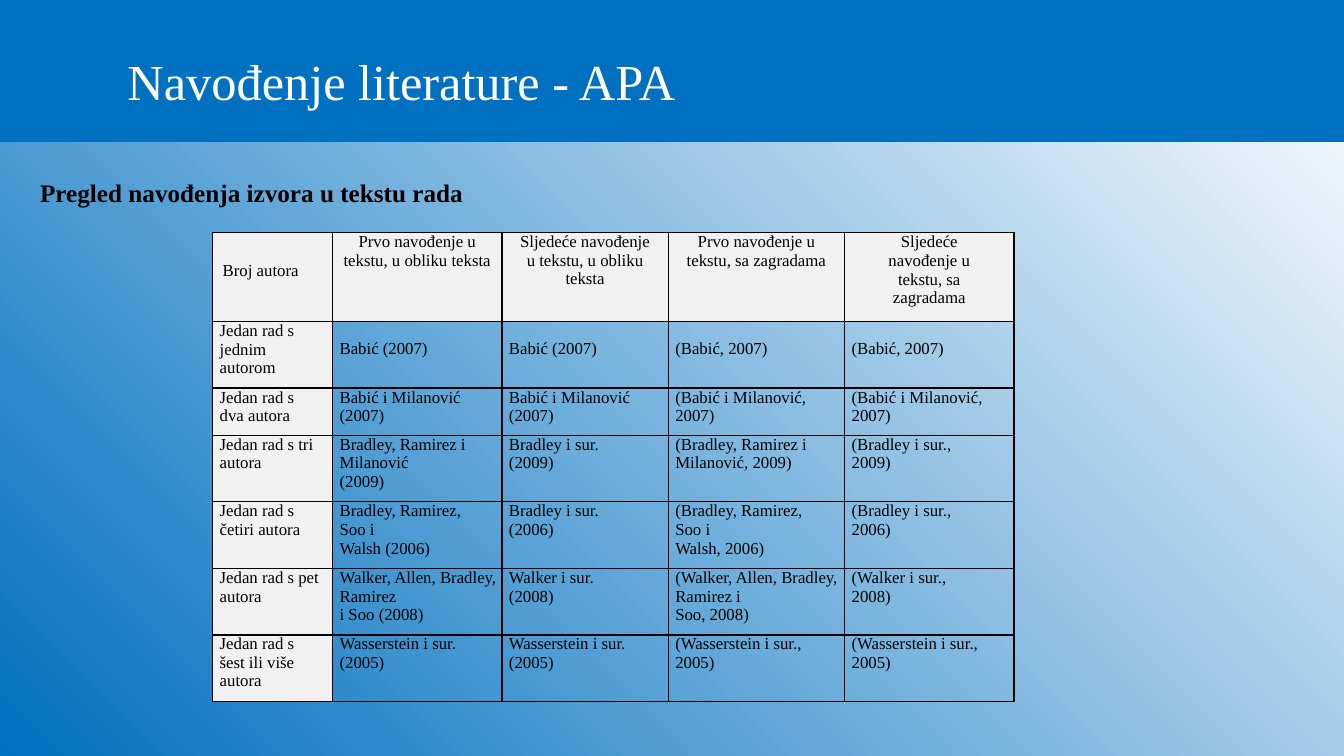
from lxml import etree
from pptx import Presentation, util as u
from pptx.dml.color import RGBColor
from pptx.enum import shapes, text
from pptx.oxml import ns

BLUE, WHITE, BLACK, PALE = "0070C0", "FFFFFF", "000000", "F1F1F1"
COLUMNS = [14.28, 20.16, 19.8, 21, 20.16]
ROWS = [10.56, 7.92, 5.64] + [7.92] * 4
HEADER_MARGINS = [1.2, 0.96, 1.8, 1.56, 3.36]
CITATIONS = [
    ["Broj autora", "Prvo navođenje u tekstu, u obliku teksta",
     "Sljedeće navođenje u tekstu, u obliku\nteksta",
     "Prvo navođenje u tekstu, sa zagradama",
     "Sljedeće navođenje u tekstu, sa\nzagradama"],
    ["Jedan rad s jednim\nautorom", "Babić (2007)", "Babić (2007)",
     "(Babić, 2007)", "(Babić, 2007)"],
    ["Jedan rad s dva autora", "Babić i Milanović (2007)", "Babić i Milanović (2007)",
     "(Babić i Milanović, 2007)", "(Babić i Milanović, 2007)"],
    ["Jedan rad s tri autora", "Bradley, Ramirez i Milanović\n(2009)",
     "Bradley i sur. (2009)", "(Bradley, Ramirez i Milanović, 2009)",
     "(Bradley i sur., 2009)"],
    ["Jedan rad s četiri autora", "Bradley, Ramirez, Soo i\nWalsh (2006)",
     "Bradley i sur. (2006)", "(Bradley, Ramirez, Soo i\nWalsh, 2006)",
     "(Bradley i sur., 2006)"],
    ["Jedan rad s pet autora", "Walker, Allen, Bradley, Ramirez\ni Soo (2008)",
     "Walker i sur. (2008)", "(Walker, Allen, Bradley, Ramirez i\nSoo, 2008)",
     "(Walker i sur., 2008)"],
    ["Jedan rad s\nšest ili više autora", "Wasserstein i sur. (2005)",
     "Wasserstein i sur. (2005)", "(Wasserstein i sur., 2005)",
     "(Wasserstein i sur., 2005)"],
]


def colour(code):
    """Turn a hex string into a colour."""
    return RGBColor.from_string(code)


def grid(steps):
    """Turn steps of a 160 by 90 grid into a length."""
    return u.Inches(steps / 12)


def apply(target, values):
    """Set every attribute named in a dict."""
    for name, value in values.items():
        setattr(target, name, value)


def cell_margins(row, column):
    """Give the insets that place and wrap one cell's text."""
    left, top, right = 0.84, 0, 0
    if row == 0:
        left = right = HEADER_MARGINS[column]
        top = 3.36 if column == 0 else 0
    elif column == 0:
        right = 1.2
    elif row == 1:
        top = 2.16
    elif row in (3, 4, 5) and column in (2, 4):
        right = 4.8
    elif row == 4:
        right = 3.6
    return {"margin_left": grid(left), "margin_top": grid(top),
            "margin_right": grid(right), "margin_bottom": 0}


class Slide:
    """Hold the style and the current slide."""

    font = "Times New Roman"

    def __init__(self, deck):
        """Add a blank page with the gradient background."""
        self.page = deck.slides.add_slide(deck.slide_layouts[6])
        fill = self.page.background.fill
        fill.gradient()
        fill.gradient_angle = 45
        for stop, code in zip(fill.gradient_stops, (BLUE, WHITE)):
            stop.color.rgb = colour(code)

    def add_span(self, para, words, size, code=BLACK, bold=False):
        """Add one styled span to a paragraph."""
        span = para.add_run()
        span.text = words
        apply(span.font, {"name": self.font, "size": u.Pt(size), "bold": bold})
        span.font.color.rgb = colour(code)

    def bar(self, *place):
        """Draw a blue bar."""
        box = self.page.shapes.add_shape(shapes.MSO_SHAPE.RECTANGLE, *map(grid, place))
        box.shadow.inherit = False
        box.fill.solid()
        box.fill.fore_color.rgb = colour(BLUE)
        box.line.color.rgb = colour(BLUE)
        box.line.width = u.Pt(1)

    def label(self, words, place, size, code, bold=False,
              anchor=text.MSO_ANCHOR.TOP, spacing=1.0):
        """Add a line of text in a wrapping box."""
        frame = self.page.shapes.add_textbox(*map(grid, place)).text_frame
        apply(frame, {"word_wrap": True, "vertical_anchor": anchor})
        para = frame.paragraphs[0]
        para.line_spacing = spacing
        self.add_span(para, words, size, code, bold)

    def border(self, cell):
        """Draw thin black lines around a cell."""
        properties = cell._tc.get_or_add_tcPr()
        for index, side in enumerate(("lnL", "lnR", "lnT", "lnB")):
            line = etree.Element(ns.qn("a:" + side), w=str(u.Pt(1)))
            fill = etree.SubElement(line, ns.qn("a:solidFill"))
            etree.SubElement(fill, ns.qn("a:srgbClr"), val=BLACK)
            properties.insert(index, line)

    def table(self, left, top, rows):
        """Add the bordered table of citations."""
        place = map(grid, (left, top, sum(COLUMNS), sum(ROWS)))
        table = self.page.shapes.add_table(len(ROWS), len(COLUMNS), *place).table
        apply(table, {"first_row": False, "horz_banding": False})
        for column, width in zip(table.columns, COLUMNS):
            column.width = grid(width)
        for row, height in zip(table.rows, ROWS):
            row.height = grid(height)
        for row, entries in enumerate(rows):
            for column, words in enumerate(entries):
                self.cell(table.cell(row, column), row, column, words)

    def cell(self, cell, row, column, words):
        """Fill, border and letter one cell."""
        apply(cell, cell_margins(row, column))
        if row == 0 or column == 0:
            cell.fill.solid()
            cell.fill.fore_color.rgb = colour(PALE)
        else:
            cell.fill.background()
        self.border(cell)
        frame = cell.text_frame
        for index, line in enumerate(words.split("\n")):
            para = frame.add_paragraph() if index else frame.paragraphs[0]
            if index:
                para.line_spacing = u.Pt(13.2)
            if row == 0 and column:
                para.alignment = text.PP_ALIGN.CENTER
            self.add_span(para, line, 12)


def main():
    """Build and save the deck."""
    deck = Presentation()
    apply(deck, {"slide_width": grid(160), "slide_height": grid(90)})
    slide = Slide(deck)
    slide.bar(0, -3.24, 160, 20.04)
    slide.label("Navođenje literature - APA", (14, 1.32, 132, 17.4), 36, WHITE,
                anchor=text.MSO_ANCHOR.MIDDLE, spacing=0.9)
    slide.table(25.32, 27.72, CITATIONS)
    slide.label("Pregled navođenja izvora u tekstu rada", (3.6, 20.52, 139, 4.8),
                18, BLACK, bold=True)
    deck.save("out.pptx")


if __name__ == "__main__":
    main()
